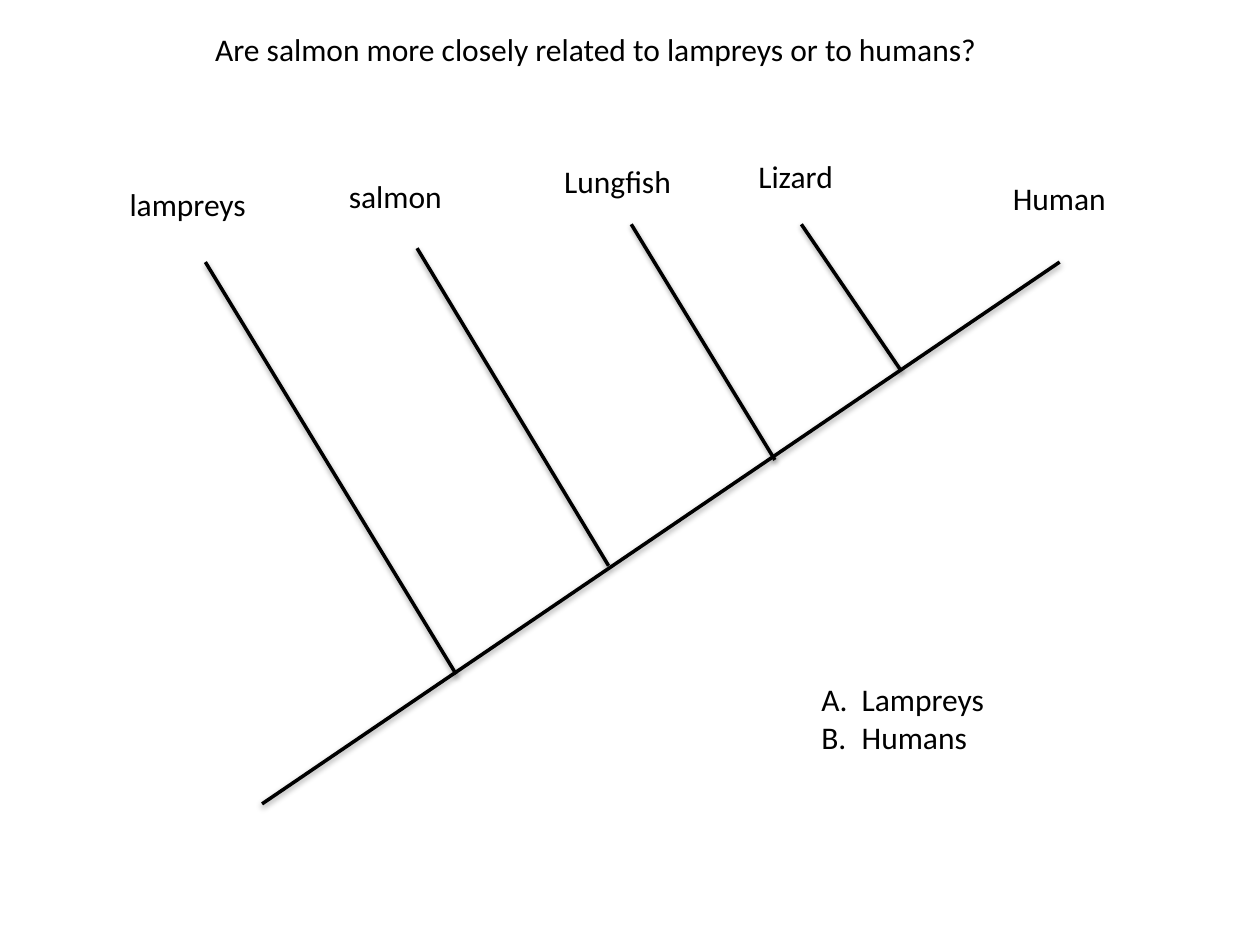
from lxml.etree import SubElement
from pptx import Presentation
from pptx.dml.color import RGBColor
from pptx.enum.shapes import MSO_CONNECTOR
from pptx.enum.text import MSO_AUTO_SIZE
from pptx.oxml.ns import qn
from pptx.util import Inches, Pt

QUESTION = ("Are salmon more closely related to lampreys or to humans?", 1.61, 0.19, 6.33)
ANSWERS = [("A.", "Lampreys"), ("B.", "Humans")]
ANSWER_PLACE = (6.42, 5.35, 1.52, 0.71)
ANSWER_INDENT = 0.32
TRUNK = ((2.08, 6.38), (8.41, 2.08))
BRANCHES = [
    ((1.63, 2.08), (3.62, 5.35)),
    ((3.31, 1.97), (4.83, 4.49)),
    ((5.01, 1.78), (6.15, 3.65)),
    ((6.36, 1.78), (7.15, 2.94)),
]
SPECIES = [
    ("lampreys", 0.93, 1.42, 1.14),
    ("salmon", 2.67, 1.36, 0.95),
    ("Lungfish", 4.38, 1.24, 1.06),
    ("Lizard", 5.92, 1.2, 0.81),
    ("Human", 7.94, 1.37, 0.95),
]
LABEL_HEIGHT = 0.4
THEME = {
    "font": "Calibri",
    "size": Pt(18),
    "ink": RGBColor(0, 0, 0),
    "line": Pt(2),
    "shadow": {"blurRad": Pt(3.1), "dist": Pt(1.6), "dir": 90 * 60000},
    "shadow_alpha": 38000,
}


def add_line(page, start, end):
    line = page.shapes.add_connector(
        MSO_CONNECTOR.STRAIGHT, *(Inches(value) for value in start + end)
    )
    line.line.color.rgb = THEME["ink"]
    line.line.width = THEME["line"]
    effects = SubElement(line._element.spPr, qn("a:effectLst"))
    shadow = SubElement(effects, qn("a:outerShdw"), rotWithShape="0")
    for name, value in THEME["shadow"].items():
        shadow.set(name, str(int(value)))
    color = SubElement(shadow, qn("a:srgbClr"), val=str(THEME["ink"]))
    SubElement(color, qn("a:alpha"), val=str(THEME["shadow_alpha"]))


def add_text(page, text, left, top, width, height=LABEL_HEIGHT, wrap=False):
    box = page.shapes.add_textbox(*(Inches(value) for value in (left, top, width, height)))
    frame = box.text_frame
    frame.text = text
    frame.word_wrap = wrap
    frame.auto_size = MSO_AUTO_SIZE.SHAPE_TO_FIT_TEXT
    for para in frame.paragraphs:
        for span in para.runs:
            span.font.name = THEME["font"]
            span.font.size = THEME["size"]
            span.font.color.rgb = THEME["ink"]
    return box


def add_answers(page):
    text = "\n".join("\t".join(answer) for answer in ANSWERS)
    box = add_text(page, text, *ANSWER_PLACE, wrap=True)
    for para in box.text_frame.paragraphs:
        properties = para._p.get_or_add_pPr()
        properties.set("marL", str(Inches(ANSWER_INDENT)))
        properties.set("indent", str(-Inches(ANSWER_INDENT)))


def main():
    deck = Presentation()
    deck.slide_width, deck.slide_height = Inches(10), Inches(7.5)
    page = deck.slides.add_slide(deck.slide_layouts[6])
    for start, end in [TRUNK, *BRANCHES]:
        add_line(page, start, end)
    for label in [*SPECIES, QUESTION]:
        add_text(page, *label)
    add_answers(page)
    deck.save("out.pptx")


if __name__ == "__main__":
    main()
